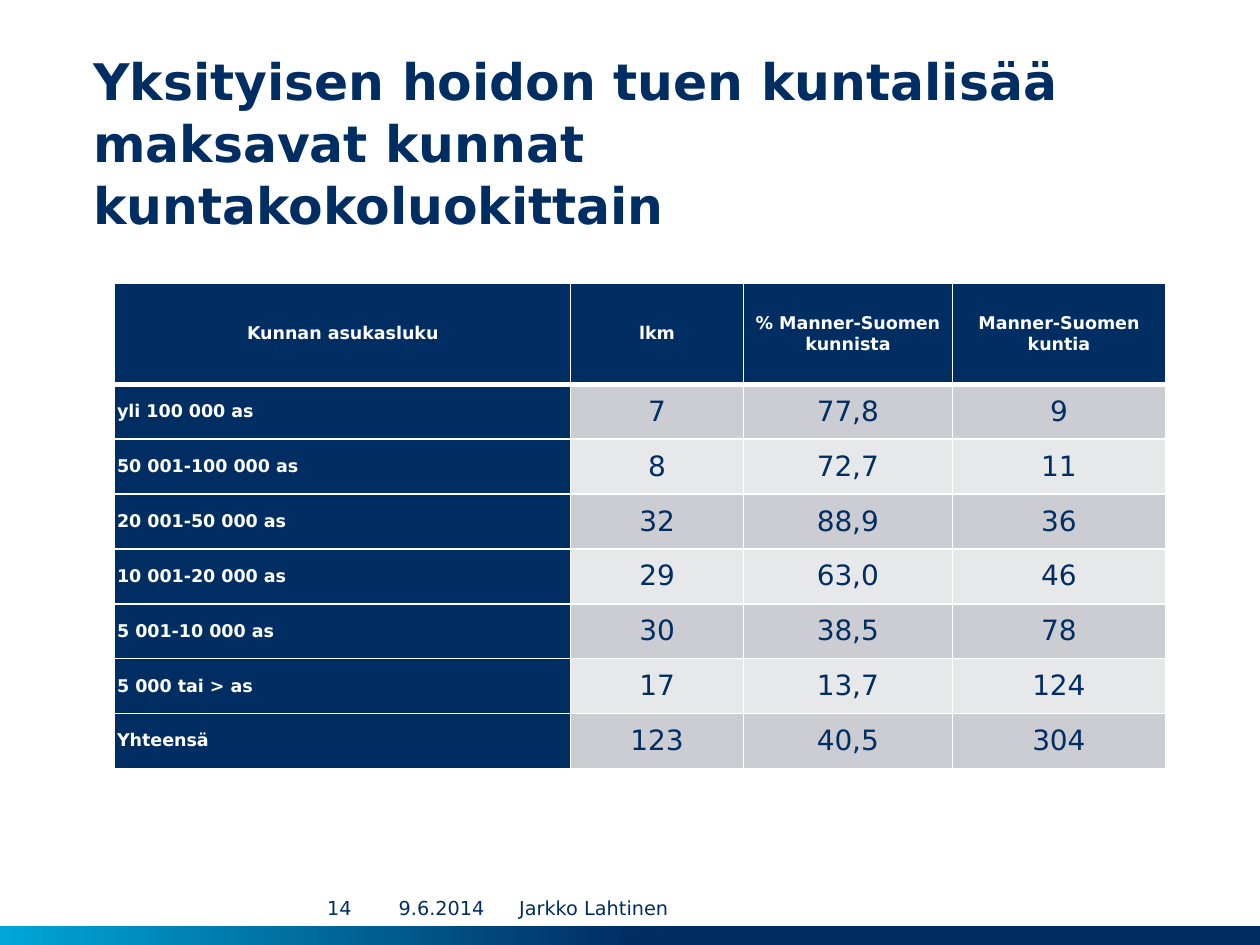
from lxml.etree import SubElement
from pptx import Presentation
from pptx.dml.color import RGBColor
from pptx.enum.shapes import MSO_SHAPE
from pptx.enum.text import MSO_ANCHOR, PP_ALIGN
from pptx.oxml.ns import qn
from pptx.util import Inches, Pt

NAVY = RGBColor(0x00, 0x2E, 0x63)
CYAN = RGBColor(0x00, 0xA6, 0xD6)
WHITE = RGBColor(0xFF, 0xFF, 0xFF)
DARK_BAND = RGBColor(0xCC, 0xCD, 0xD3)
LIGHT_BAND = RGBColor(0xE7, 0xE8, 0xEA)

TITLE_FORMAT = {"size": Pt(28.8), "bold": True}
LABEL_FORMAT = {"size": Pt(10), "bold": True}
VALUE_FORMAT = {"size": Pt(16), "bold": False}
FOOTER_FORMAT = {"size": Pt(11), "bold": False}

COLUMN_WIDTHS = [3.62, 1.37, 1.66, 1.69]
HEADER_HEIGHT = 0.8
BODY_HEIGHT = 3.05
ROWS = [
    ["Kunnan asukasluku", "lkm", "% Manner-Suomen kunnista", "Manner-Suomen kuntia"],
    ["yli 100 000 as", "7", "77,8", "9"],
    ["50 001-100 000 as", "8", "72,7", "11"],
    ["20 001-50 000 as", "32", "88,9", "36"],
    ["10 001-20 000 as", "29", "63,0", "46"],
    ["5 001-10 000 as", "30", "38,5", "78"],
    ["5 000 tai > as", "17", "13,7", "124"],
    ["Yhteensä", "123", "40,5", "304"],
]
FOOTERS = [
    ("9.6.2014", 3.01, 0.99, PP_ALIGN.CENTER),
    ("Jarkko Lahtinen", 4.12, 3.39, PP_ALIGN.LEFT),
    ("14", 2.48, 0.43, PP_ALIGN.CENTER),
]


class SlideBuilder:
    font_name = "DejaVu Sans"

    def __init__(self, slide):
        self.slide = slide

    def fill_text(self, text_frame, text, font_format, color, alignment):
        paragraph = text_frame.paragraphs[0]
        paragraph.alignment = alignment
        run = paragraph.add_run()
        run.text = text
        run.font.name = self.font_name
        run.font.color.rgb = color
        for name, value in font_format.items():
            setattr(run.font, name, value)
        return paragraph

    def set_margins(self, target, horizontal, top, bottom):
        margins = {"left": horizontal, "right": horizontal, "top": top, "bottom": bottom}
        for side, value in margins.items():
            setattr(target, f"margin_{side}", Inches(value))

    def text_box(self, text, box, font_format, alignment=PP_ALIGN.LEFT,
                 anchor=MSO_ANCHOR.MIDDLE, top=0, bottom=0):
        shape = self.slide.shapes.add_textbox(*map(Inches, box))
        text_frame = shape.text_frame
        text_frame.word_wrap = True
        text_frame.vertical_anchor = anchor
        self.set_margins(text_frame, 0, top, bottom)
        return self.fill_text(text_frame, text, font_format, NAVY, alignment)

    def gradient_bar(self, box):
        shape = self.slide.shapes.add_shape(MSO_SHAPE.RECTANGLE, *map(Inches, box))
        shape.shadow.inherit = False
        shape.line.fill.background()
        shape.fill.gradient()
        shape.fill.gradient_angle = 180
        for stop, position, color in zip(shape.fill.gradient_stops, (0.5, 1), (NAVY, CYAN)):
            stop.position = position
            stop.color.rgb = color

    def cell_borders(self, cell, top, bottom):
        """Draw white borders; top and bottom are widths in points."""
        properties = cell._tc.get_or_add_tcPr()
        widths = {"lnL": 1, "lnR": 1, "lnT": top, "lnB": bottom}
        for index, (side, width) in enumerate(widths.items()):
            line = SubElement(properties, qn(f"a:{side}"), w=str(Pt(width)))
            fill = SubElement(line, qn("a:solidFill"))
            SubElement(fill, qn("a:srgbClr"), val=str(WHITE))
            properties.insert(index, line)

    def table_cell(self, cell, text, row, column):
        is_label = row == 0 or column == 0
        band = DARK_BAND if row % 2 else LIGHT_BAND
        cell.fill.solid()
        cell.fill.fore_color.rgb = NAVY if is_label else band
        cell.vertical_anchor = MSO_ANCHOR.MIDDLE
        self.set_margins(cell, 0.02, 0, 0)
        self.fill_text(
            cell.text_frame, text,
            LABEL_FORMAT if is_label else VALUE_FORMAT,
            WHITE if is_label else NAVY,
            PP_ALIGN.LEFT if row and column == 0 else PP_ALIGN.CENTER,
        )
        self.cell_borders(cell, top=3 if row == 1 else 1, bottom=3 if row == 0 else 1)

    def table(self, rows, left, top):
        box = (left, top, sum(COLUMN_WIDTHS), HEADER_HEIGHT + BODY_HEIGHT)
        frame = self.slide.shapes.add_table(len(rows), len(COLUMN_WIDTHS), *map(Inches, box))
        table = frame.table
        for column, width in zip(table.columns, COLUMN_WIDTHS):
            column.width = Inches(width)
        for index, texts in enumerate(rows):
            height = BODY_HEIGHT / (len(rows) - 1) if index else HEADER_HEIGHT
            table.rows[index].height = Inches(height)
            for column, text in enumerate(texts):
                self.table_cell(table.cell(index, column), text, index, column)


def main():
    presentation = Presentation()
    presentation.slide_width = Inches(10)
    presentation.slide_height = Inches(7.5)
    builder = SlideBuilder(presentation.slides.add_slide(presentation.slide_layouts[6]))

    builder.gradient_bar((0, 7.35, 10, 0.16))
    title = builder.text_box(
        "Yksityisen hoidon tuen kuntalisää maksavat kunnat kuntakokoluokittain",
        (0.74, 0.3, 8.51, 1.25), TITLE_FORMAT,
        anchor=MSO_ANCHOR.TOP, top=0.08, bottom=0.05,
    )
    title.line_spacing = 1.03
    builder.table(ROWS, 0.91, 2.25)
    for text, left, width, alignment in FOOTERS:
        builder.text_box(text, (left, 7.06, width, 0.29), FOOTER_FORMAT, alignment)
    presentation.save("out.pptx")


if __name__ == "__main__":
    main()
